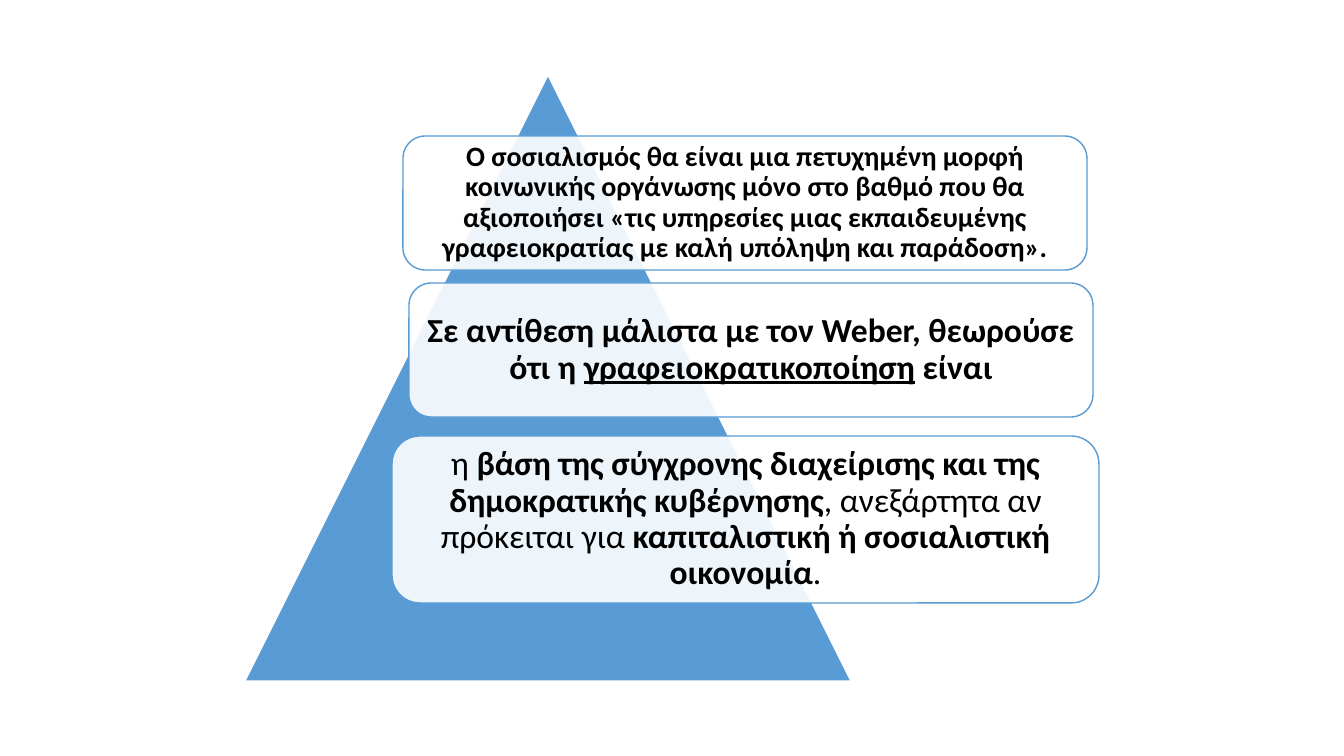
from dataclasses import dataclass

from lxml import etree
from pptx import Presentation
from pptx.dml.color import RGBColor
from pptx.enum.shapes import MSO_SHAPE
from pptx.enum.text import MSO_ANCHOR, PP_ALIGN
from pptx.oxml.ns import qn
from pptx.util import Pt

TRIANGLE = MSO_SHAPE.ISOSCELES_TRIANGLE
ROUND = MSO_SHAPE.ROUNDED_RECTANGLE
MIDDLE = MSO_ANCHOR.MIDDLE
CENTER = PP_ALIGN.CENTER

# Each run is its wording and its style: "b" bold, "u" underlined.
SOCIALISM = [
    ("Ο σοσιαλισμός θα είναι μια πετυχημένη μορφή κοινωνικής οργάνωσης μόνο "
     "στο βαθμό που θα αξιοποιήσει «τις υπηρεσίες μιας εκπαιδευμένης "
     "γραφειοκρατίας με καλή υπόληψη και παράδοση».", "b"),
]
WEBER = [
    ("Σε αντίθεση μάλιστα με τον Weber, θεωρούσε ότι η ", "b"),
    ("γραφειοκρατικοποίηση", "bu"),
    (" είναι", "b"),
]
BASIS = [
    ("η ", ""),
    ("βάση της σύγχρονης διαχείρισης και της δημοκρατικής κυβέρνησης", "b"),
    (", ανεξάρτητα αν πρόκειται για ", ""),
    ("καπιταλιστική ή σοσιαλιστική οικονομία", "b"),
    (".", ""),
]


@dataclass(frozen=True)
class Theme:
    blue: RGBColor = RGBColor(0x59, 0x9B, 0xD5)
    white: RGBColor = RGBColor(0xFF, 0xFF, 0xFF)
    black: RGBColor = RGBColor(0, 0, 0)
    font: str = "Calibri"
    small: int = 20
    large: int = 24


THEME = Theme()
SIZE = (1344, 756)
PYRAMID = (245, 75, 606, 606)
# Left, top, width, height, inset, type size, runs
CARDS = [
    (403, 136, 684, 134, 8, THEME.small, SOCIALISM),
    (409, 283, 684, 134, 10, THEME.large, WEBER),
    (392, 436, 707, 167, 10, THEME.large, BASIS),
]


def px(n):
    return round(n * 914400 / 100.8)


def add_shape(slide, kind, box, fill, line):
    shape = slide.shapes.add_shape(kind, *map(px, box))
    shape.shadow.inherit = False
    shape.fill.solid()
    shape.fill.fore_color.rgb = fill
    shape.line.color.rgb = line
    shape.line.width = Pt(1)
    return shape


def set_alpha(shape, percent):
    color = shape.fill._xPr.find(qn("a:solidFill"))[0]
    etree.SubElement(color, qn("a:alpha")).set("val", str(percent * 1000))


def write(shape, inset, size, runs):
    frame = shape.text_frame
    frame.word_wrap = True
    frame.vertical_anchor = MIDDLE
    frame.margin_left = frame.margin_right = px(inset)
    frame.margin_top = frame.margin_bottom = px(inset)
    para = frame.paragraphs[0]
    para.alignment = CENTER
    para.line_spacing = 0.9
    for text, style in runs:
        run = para.add_run()
        run.text = text
        font = run.font
        font.name = THEME.font
        font.size = Pt(size)
        font.color.rgb = THEME.black
        font.bold = "b" in style
        font.underline = "u" in style


def main():
    deck = Presentation()
    deck.slide_width, deck.slide_height = map(px, SIZE)
    slide = deck.slides.add_slide(deck.slide_layouts[6])
    add_shape(slide, TRIANGLE, PYRAMID, THEME.blue, THEME.white)
    for *box, inset, size, runs in CARDS:
        card = add_shape(slide, ROUND, box, THEME.white, THEME.blue)
        set_alpha(card, 90)
        write(card, inset, size, runs)
    deck.save("out.pptx")


if __name__ == "__main__":
    main()
